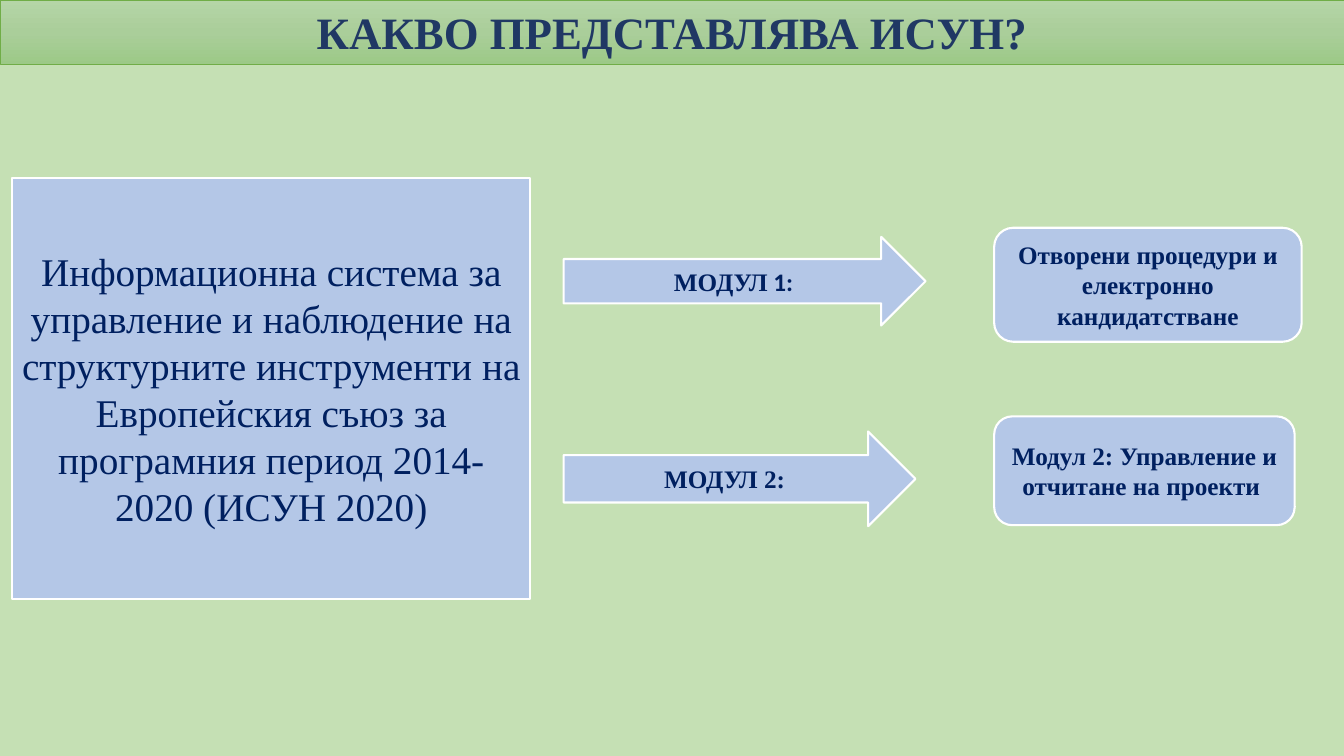
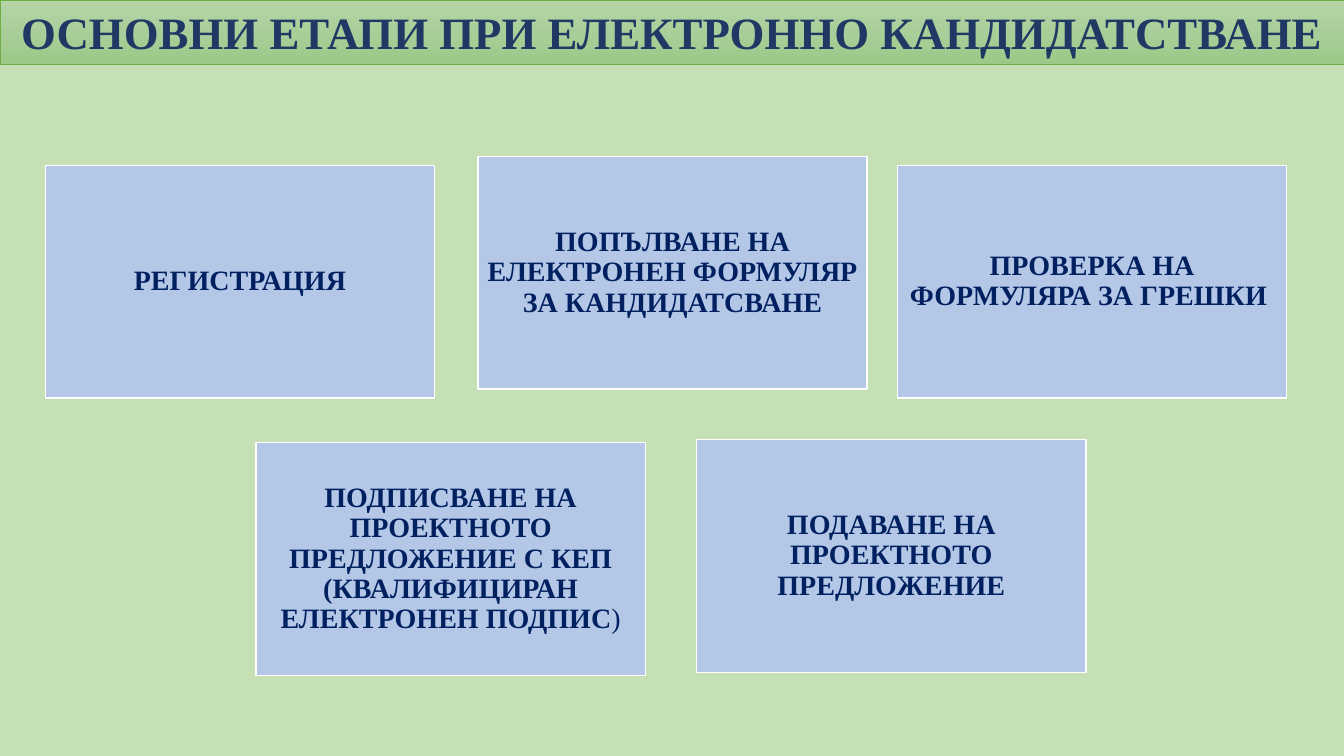
from copy import deepcopy

from pptx import Presentation
from pptx.dml.color import RGBColor
from pptx.enum.shapes import MSO_SHAPE as Shape
from pptx.enum.text import MSO_ANCHOR as Anchor, MSO_AUTO_SIZE as AutoSize, PP_ALIGN as Align
from pptx.oxml.ns import qn
from pptx.util import Inches, Pt

SLIDE_WIDTH, SLIDE_HEIGHT = Inches(13.33), Inches(7.5)
BACKGROUND = RGBColor(0xC5, 0xE0, 0xB4)
BAND_STOPS = (
    (0, RGBColor(0xB5, 0xD5, 0xA7)),
    (0.5, RGBColor(0xAA, 0xCE, 0x9A)),
    (1, RGBColor(0x9C, 0xC9, 0x87)),
)
BAND_LINE = RGBColor(0x70, 0xAD, 0x47)
TITLE_COLOR = RGBColor(0x20, 0x38, 0x64)
BOX_FILL = RGBColor(0xB4, 0xC7, 0xE7)
BOX_LINE = RGBColor(0xFF, 0xFF, 0xFF)
BOX_TEXT = RGBColor(0x00, 0x20, 0x60)

BASE_FONT = {"name": "Times New Roman", "bold": True}
TITLE_FONT = {**BASE_FONT, "size": Pt(32)}
SYSTEM_FONT = {**BASE_FONT, "size": Pt(28), "bold": False}
MODULE_FONT = {**BASE_FONT, "size": Pt(18)}
STAGE_FONT = {**BASE_FONT, "size": Pt(20)}

STAGE_FRAME = {f"margin_{side}": Inches(0.08) for side in ("left", "top", "right", "bottom")}
STAGE_SIZE = (28.96, 30.8)

SYSTEM_TEXT = (
    "Информационна система за управление и наблюдение на структурните инструменти "
    "на Европейския съюз за програмния период 2014-2020 (ИСУН 2020)"
)
MODULES = (
    (Shape.RIGHT_ARROW, (41.94, 31.33, 26.93, 11.73), [("МОДУЛ", {}), (" 1:", {"name": "Calibri"})]),
    (Shape.RIGHT_ARROW, (41.94, 57.07, 26.18, 12.53), [("МОДУЛ 2: ", {})]),
    (Shape.ROUNDED_RECTANGLE, (73.97, 30.13, 22.88, 15.07),
     [("Отворени процедури и електронно кандидатстване", {})]),
    (Shape.ROUNDED_RECTANGLE, (73.97, 55.07, 22.36, 14.4),
     [("Модул 2: Управление и отчитане на проекти ", {})]),
)
STAGES = (
    ((3.38, 21.87), [("РЕГИСТРАЦИЯ", {})]),
    ((35.56, 20.67), [("ПОПЪЛВАНЕ НА ЕЛЕКТРОНЕН ФОРМУЛЯР ЗА КАНДИДАТСВАНЕ", {})]),
    ((66.77, 21.87), [("ПРОВЕРКА НА ФОРМУЛЯРА ЗА ГРЕШКИ ", {})]),
    ((19.05, 58.53),
     [("ПОДПИСВАНЕ НА ПРОЕКТНОТО ПРЕДЛОЖЕНИЕ С КЕП (КВАЛИФИЦИРАН ЕЛЕКТРОНЕН ПОДПИС", {}),
      (")", {"bold": False})]),
    ((51.84, 58.13), [("ПОДАВАНЕ НА ПРОЕКТНОТО ПРЕДЛОЖЕНИЕ", {})]),
)


def apply(target, values):
    for name, value in values.items():
        setattr(target, name, value)


def add_shape(slide, kind, percent, line_color, line_width):
    full = (SLIDE_WIDTH, SLIDE_HEIGHT) * 2
    place = [round(length * share / 100) for length, share in zip(full, percent)]
    shape = slide.shapes.add_shape(kind, *place)
    shape.shadow.inherit = False
    shape.line.color.rgb = line_color
    shape.line.width = Pt(line_width)
    return shape


def write_text(shape, runs, font, color, frame_format, line_spacing=None):
    frame = shape.text_frame
    apply(frame, {"word_wrap": True, **frame_format})
    paragraph = frame.paragraphs[0]
    apply(paragraph, {"alignment": Align.CENTER, "line_spacing": line_spacing})
    for text, changes in runs:
        run = paragraph.add_run()
        run.text = text
        apply(run.font, {**font, **changes})
        run.font.color.rgb = color


def fill_band(shape):
    shape.fill.gradient()
    shape.fill.gradient_angle = 270
    stop_list = next(shape.element.iter(qn("a:gsLst")))
    stop_list.append(deepcopy(stop_list[0]))
    for stop, (position, color) in zip(shape.fill.gradient_stops, BAND_STOPS):
        stop.position = position
        stop.color.rgb = color


def add_titled_slide(presentation, title):
    slide = presentation.slides.add_slide(presentation.slide_layouts[6])
    slide.background.fill.solid()
    slide.background.fill.fore_color.rgb = BACKGROUND
    band = add_shape(slide, Shape.RECTANGLE, (0, 0, 100, 8.53), BAND_LINE, 0.5)
    fill_band(band)
    frame_format = {"vertical_anchor": Anchor.TOP, "auto_size": AutoSize.SHAPE_TO_FIT_TEXT}
    write_text(band, [(title, {})], TITLE_FONT, TITLE_COLOR, frame_format)
    return slide


def add_box(slide, kind, percent, runs, font, line_width=1.5, frame_format=None, line_spacing=None):
    box = add_shape(slide, kind, percent, BOX_LINE, line_width)
    box.fill.solid()
    box.fill.fore_color.rgb = BOX_FILL
    frame_format = {"vertical_anchor": Anchor.MIDDLE, **(frame_format or {})}
    write_text(box, runs, font, BOX_TEXT, frame_format, line_spacing)


def build_system_slide(presentation):
    slide = add_titled_slide(presentation, "КАКВО ПРЕДСТАВЛЯВА ИСУН?")
    add_box(slide, Shape.RECTANGLE, (0.9, 23.6, 38.56, 55.6), [(SYSTEM_TEXT, {})], SYSTEM_FONT)
    for kind, percent, runs in MODULES:
        add_box(slide, kind, percent, runs, MODULE_FONT)


def build_stages_slide(presentation):
    slide = add_titled_slide(presentation, "ОСНОВНИ ЕТАПИ ПРИ ЕЛЕКТРОННО КАНДИДАТСТВАНЕ")
    for corner, runs in STAGES:
        add_box(slide, Shape.RECTANGLE, corner + STAGE_SIZE, runs, STAGE_FONT, 1, STAGE_FRAME, 0.9)


def main():
    presentation = Presentation()
    apply(presentation, {"slide_width": SLIDE_WIDTH, "slide_height": SLIDE_HEIGHT})
    build_system_slide(presentation)
    build_stages_slide(presentation)
    presentation.save("out.pptx")


if __name__ == "__main__":
    main()
